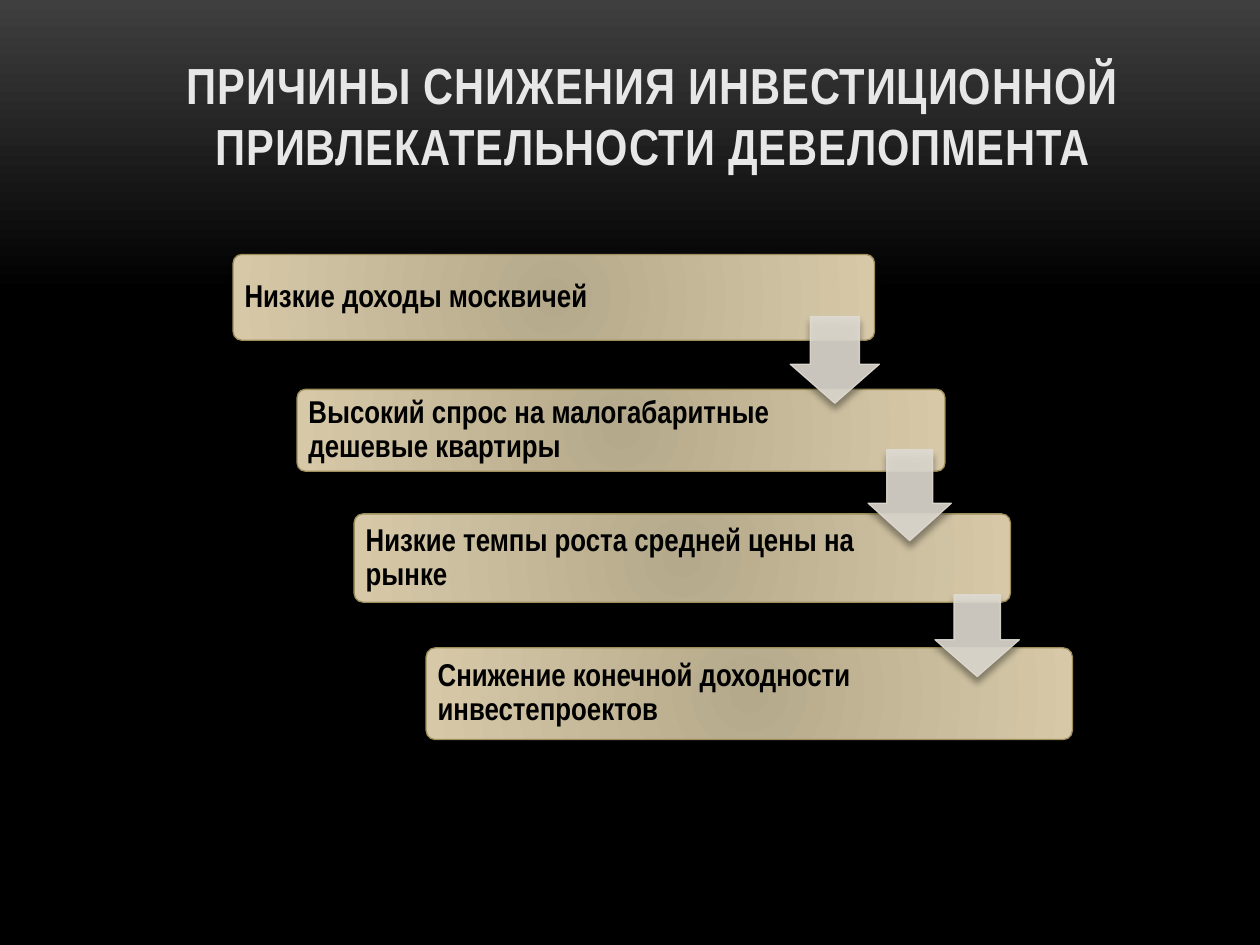
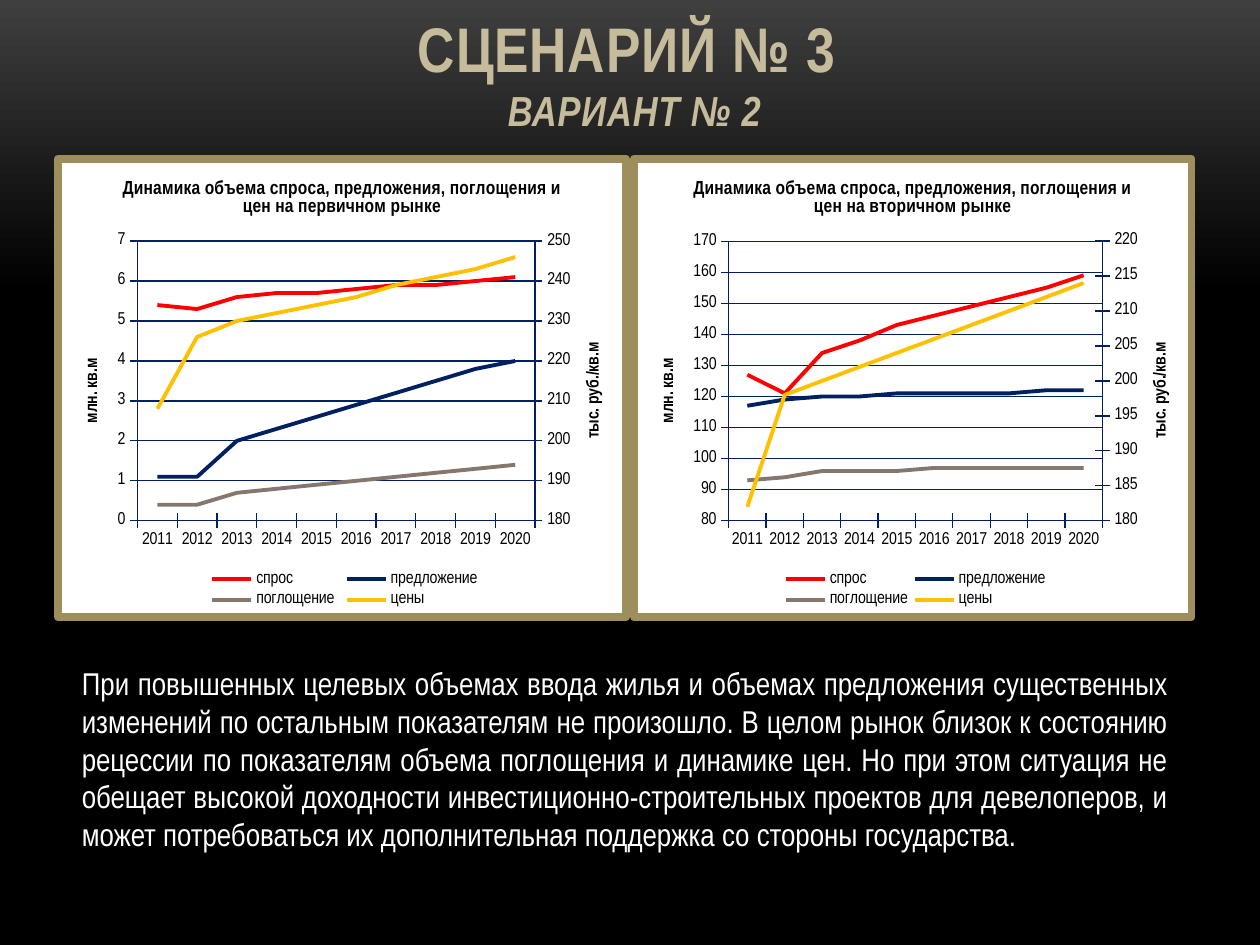
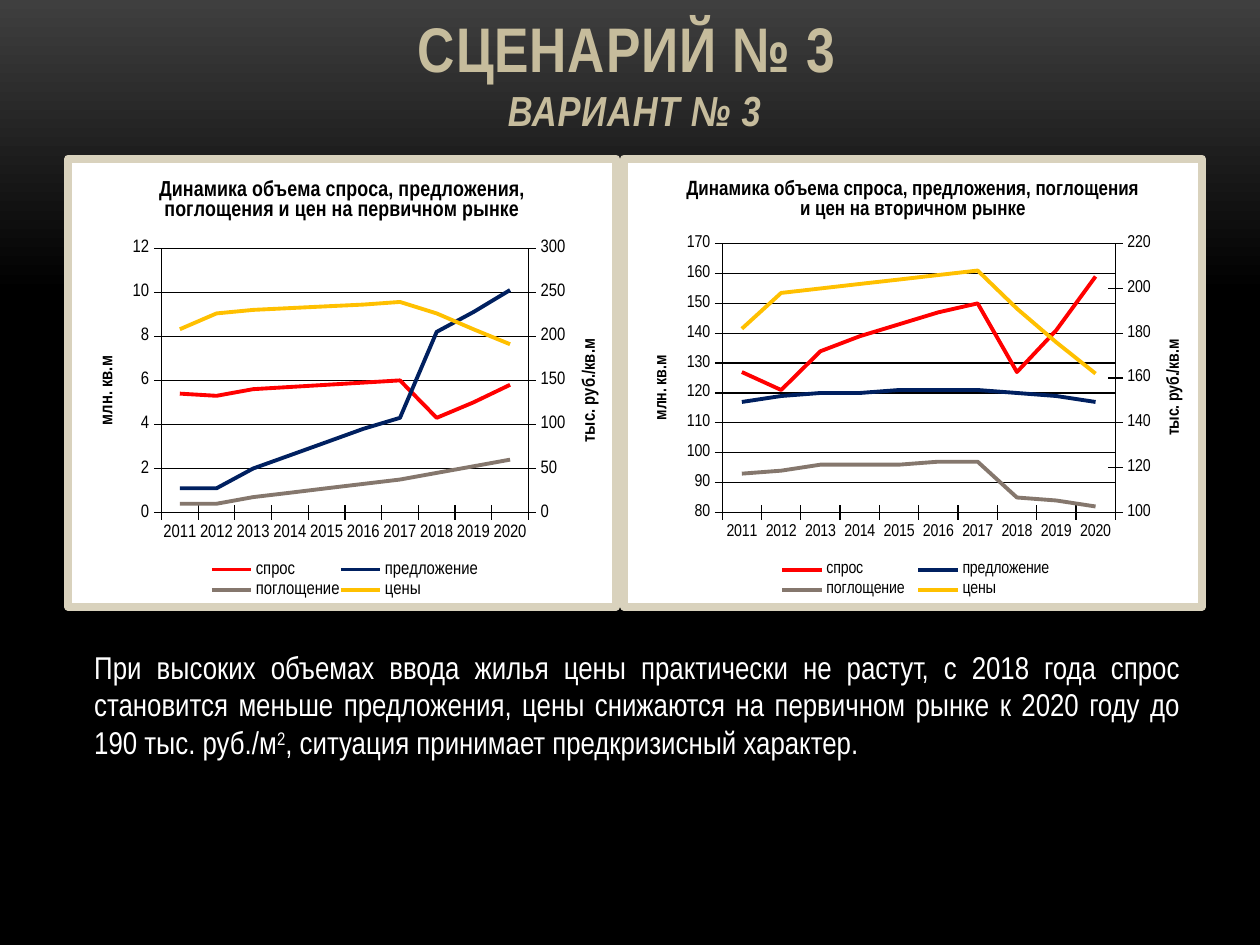
from copy import deepcopy
from dataclasses import dataclass

from pptx import Presentation
from pptx.chart.axis import ValueAxis
from pptx.chart.data import CategoryChartData
from pptx.dml.color import RGBColor
from pptx.enum.chart import XL_CHART_TYPE, XL_LEGEND_POSITION, XL_TICK_MARK
from pptx.enum.shapes import MSO_SHAPE
from pptx.enum.text import MSO_ANCHOR, PP_ALIGN
from pptx.oxml import parse_xml
from pptx.oxml.ns import nsdecls, qn
from pptx.util import Cm, Pt


@dataclass(frozen=True)
class Theme:
    font: str = "Arial Narrow"
    background_top: str = "3F3F3F"
    black: str = "000000"
    white: str = "FFFFFF"
    title: str = "E8E7E8"
    scenario: str = "C6BC9C"
    step_centre: str = "B4A98B"
    step_edge: str = "D7C9A8"
    gold: str = "9E8E5C"
    pale_gold: str = "D9D2BD"
    arrow: str = "DFDBD2"
    navy: str = "002060"
    series: tuple = ("FF0000", "002060", "85776D", "FFC000")
    title_size: float = 29
    scenario_size: float = 36
    variant_size: float = 24
    body_size: float = 18
    label_size: float = 10
    thin: float = 0.75
    curve: float = 2.25
    frame: float = 4.5


@dataclass(frozen=True)
class Scale:
    minimum: float
    maximum: float
    step: float


@dataclass(frozen=True)
class MarketChart:
    market: str
    box: tuple
    plot: tuple
    volume_scale: Scale
    price_scale: Scale
    values: tuple
    frame: str
    lines: str
    title_size: float
    label_size: float = Theme.label_size


YEARS = [str(year) for year in range(2011, 2021)]
SERIES_NAMES = ("спрос", "предложение", "поглощение", "цены")
LEGEND_BOX = (0.26, 0.89, 0.49, 0.1)
PRIMARY = "первичном"
SECONDARY = "вторичном"


def colour(value):
    return RGBColor.from_string(value)


def box_lengths(box):
    return [Cm(length) for length in box]


def set_line(line, value, width):
    line.color.rgb = colour(value)
    line.width = Pt(width)


def set_layout(parent, position, box, inner=False):
    """Place a chart part by fractions of the chart's size."""
    old_layout = parent.find(qn("c:layout"))
    if old_layout is not None:
        parent.remove(old_layout)
    target = '<c:layoutTarget val="inner"/>' if inner else ""
    modes = '<c:xMode val="edge"/><c:yMode val="edge"/>'
    sizes = "".join(f'<c:{key} val="{value}"/>' for key, value in zip("xywh", box))
    parent.insert(position, parse_xml(
        f'<c:layout {nsdecls("c")}><c:manualLayout>{target}{modes}{sizes}'
        '</c:manualLayout></c:layout>'))


def add_shadow(shape, blur, distance):
    shape.shadow.inherit = False
    effects = shape.element.spPr.find(qn("a:effectLst"))
    effects.append(parse_xml(
        f'<a:outerShdw {nsdecls("a")} blurRad="{Pt(blur)}" dist="{Pt(distance)}" '
        'dir="5400000" rotWithShape="0"><a:srgbClr val="000000">'
        '<a:alpha val="40000"/></a:srgbClr></a:outerShdw>'))


class Deck:
    def __init__(self, theme):
        self.theme = theme
        self.presentation = Presentation()
        self.presentation.slide_width = Cm(25.4)
        self.presentation.slide_height = Cm(19.05)
        self.slide = None

    def add_slide(self):
        self.slide = self.presentation.slides.add_slide(
            self.presentation.slide_layouts[6])
        fill = self.slide.background.fill
        self.set_gradient(fill, self.theme.background_top, self.theme.black, 0.31)
        fill.gradient_angle = 270

    def set_gradient(self, fill, first, last, end=1.0):
        fill.gradient()
        for stop, value, position in zip(fill.gradient_stops, (first, last), (0, end)):
            stop.color.rgb = colour(value)
            stop.position = position

    def format_run(self, run, size, value, bold=False, italic=False):
        run.font.name = self.theme.font
        run.font.size = Pt(size)
        run.font.color.rgb = colour(value)
        run.font.bold = bold
        run.font.italic = italic

    def text_box(self, box, anchor=MSO_ANCHOR.TOP):
        text_frame = self.slide.shapes.add_textbox(*box_lengths(box)).text_frame
        text_frame.word_wrap = True
        text_frame.vertical_anchor = anchor
        return text_frame

    def title(self, box, lines):
        """Add a centred title; each line is (text, size, colour, italic)."""
        text_frame = self.text_box(box, MSO_ANCHOR.BOTTOM)
        text_frame.text = "\n".join(line[0] for line in lines)
        for paragraph, (_, size, value, italic) in zip(text_frame.paragraphs, lines):
            paragraph.alignment = PP_ALIGN.CENTER
            run = paragraph.runs[0]
            self.format_run(run, size, value, bold=True, italic=italic)
            run.font._element.set("spc", "50")

    def scenario_title(self, variant):
        theme = self.theme
        self.title((2.31, 0.05, 20.96, 2.8), [
            ("СЦЕНАРИЙ № 3 ", theme.scenario_size, theme.scenario, False),
            (f"ВАРИАНТ № {variant}", theme.variant_size, theme.scenario, True)])

    def body(self, box, text, superscript="", ending=""):
        paragraph = self.text_box(box).paragraphs[0]
        paragraph.alignment = PP_ALIGN.JUSTIFY
        for part in filter(None, (text, superscript, ending)):
            run = paragraph.add_run()
            run.text = part
            self.format_run(run, self.theme.body_size, self.theme.white)
            if part == superscript:
                run.font._element.set("baseline", "30000")

    def step(self, box, text):
        shape = self.slide.shapes.add_shape(
            MSO_SHAPE.ROUNDED_RECTANGLE, *box_lengths(box))
        shape.adjustments[0] = 0.1
        self.set_gradient(shape.fill, self.theme.step_centre, self.theme.step_edge)
        gradient = shape.element.spPr.find(qn("a:gradFill"))
        gradient.replace(gradient.find(qn("a:lin")), parse_xml(
            f'<a:path {nsdecls("a")} path="circle"><a:fillToRect '
            'l="50000" t="50000" r="50000" b="50000"/></a:path>'))
        set_line(shape.line, self.theme.gold, self.theme.thin)
        add_shadow(shape, 3, 2)
        text_frame = shape.text_frame
        text_frame.word_wrap = True
        text_frame.vertical_anchor = MSO_ANCHOR.MIDDLE
        text_frame.margin_left = text_frame.margin_top = Cm(0.18)
        text_frame.margin_bottom = Cm(0.18)
        text_frame.margin_right = Cm(0.18 + 0.2 * box[2])
        text_frame.text = text
        paragraph = text_frame.paragraphs[0]
        paragraph.alignment = PP_ALIGN.LEFT
        paragraph.line_spacing = 0.9
        self.format_run(paragraph.runs[0], self.theme.body_size, self.theme.black, True)

    def down_arrow(self, box):
        shape = self.slide.shapes.add_shape(MSO_SHAPE.DOWN_ARROW, *box_lengths(box))
        shape.adjustments[0] = 0.55
        shape.adjustments[1] = 0.45
        shape.fill.solid()
        shape.fill.fore_color.rgb = colour(self.theme.arrow)
        set_line(shape.line, self.theme.arrow, self.theme.thin)
        for solid_colour in shape.element.spPr.iter(qn("a:srgbClr")):
            solid_colour.append(parse_xml(f'<a:alpha {nsdecls("a")} val="90000"/>'))
        add_shadow(shape, 4, 3.4)

    def chart_text(self, text_frame, text, size):
        text_frame.text = text
        self.format_run(text_frame.paragraphs[0].runs[0], size, self.theme.black, True)

    def format_axis(self, axis, line_colour):
        axis.major_tick_mark = XL_TICK_MARK.CROSS
        axis.minor_tick_mark = XL_TICK_MARK.NONE
        set_line(axis.format.line, line_colour, self.theme.thin)

    def format_value_axis(self, axis, scale, title, market_chart):
        self.format_axis(axis, market_chart.lines)
        axis.minimum_scale = scale.minimum
        axis.maximum_scale = scale.maximum
        axis.major_unit = scale.step
        text_frame = axis.axis_title.text_frame
        self.chart_text(text_frame, title, market_chart.label_size)
        body_properties = text_frame._txBody.find(qn("a:bodyPr"))
        body_properties.set("rot", "-5400000")
        body_properties.set("vert", "horz")

    def add_price_axis(self, chart, market_chart):
        """Move the last series to a second line plot with its own right axis."""
        plot_area = chart.element.chart.plotArea
        volume_plot, category_axis, value_axis = (
            plot_area.find(qn(f"c:{tag}")) for tag in ("lineChart", "catAx", "valAx"))
        crosses = value_axis.find(qn("c:crosses"))
        if value_axis.find(qn("c:crossBetween")) is None:
            crosses.addnext(parse_xml(
                f'<c:crossBetween {nsdecls("c")} val="between"/>'))
        price_plot, price_categories, price_axis = (
            deepcopy(element) for element in (volume_plot, category_axis, value_axis))
        for series in price_plot.findall(qn("c:ser"))[:-1]:
            price_plot.remove(series)
        volume_plot.remove(volume_plot.findall(qn("c:ser"))[-1])
        category_id, value_id = "50010", "50020"
        for axis_id, value in zip(price_plot.findall(qn("c:axId")),
                                  (category_id, value_id)):
            axis_id.set("val", value)
        for axis, own_id, crossing_id in ((price_categories, category_id, value_id),
                                          (price_axis, value_id, category_id)):
            axis.find(qn("c:axId")).set("val", own_id)
            axis.find(qn("c:crossAx")).set("val", crossing_id)
        price_categories.find(qn("c:delete")).set("val", "1")
        price_axis.find(qn("c:axPos")).set("val", "r")
        price_axis.find(qn("c:crosses")).set("val", "max")
        volume_plot.addnext(price_plot)
        value_axis.addnext(price_axis)
        price_axis.addnext(price_categories)
        right_axis = ValueAxis(price_axis)
        right_axis.has_major_gridlines = False
        self.format_value_axis(
            right_axis, market_chart.price_scale, "тыс. руб./кв.м", market_chart)

    def chart(self, market_chart):
        theme = self.theme
        data = CategoryChartData()
        data.categories = YEARS
        for name, values in zip(SERIES_NAMES, market_chart.values):
            data.add_series(name, values)
        chart = self.slide.shapes.add_chart(
            XL_CHART_TYPE.LINE, *box_lengths(market_chart.box), data).chart
        chart.font.name = theme.font
        chart.font.size = Pt(market_chart.label_size)
        chart.font.color.rgb = colour(theme.black)
        chart.has_title = True
        self.chart_text(
            chart.chart_title.text_frame,
            "Динамика объема спроса, предложения, поглощения и цен на "
            f"{market_chart.market} рынке", market_chart.title_size)

        plot = chart.plots[0]
        plot.vary_by_categories = False
        for series, value in zip(plot.series, theme.series):
            series.smooth = False
            set_line(series.format.line, value, theme.curve)
        self.format_axis(chart.category_axis, market_chart.lines)
        value_axis = chart.value_axis
        self.format_value_axis(
            value_axis, market_chart.volume_scale, "млн. кв.м", market_chart)
        set_line(value_axis.major_gridlines.format.line, market_chart.lines, theme.thin)
        self.add_price_axis(chart, market_chart)

        chart.has_legend = True
        chart.legend.position = XL_LEGEND_POSITION.BOTTOM
        chart.legend.include_in_layout = False
        set_layout(chart.legend._element, 1, LEGEND_BOX)
        chart_element = chart.element.chart
        set_layout(chart_element.plotArea, 0, market_chart.plot, inner=True)
        chart_element.addnext(parse_xml(
            f'<c:spPr {nsdecls("c", "a")}><a:solidFill><a:srgbClr val="{theme.white}"/>'
            f'</a:solidFill><a:ln w="{Pt(theme.frame)}"><a:solidFill>'
            f'<a:srgbClr val="{market_chart.frame}"/></a:solidFill><a:round/></a:ln>'
            '</c:spPr>'))


def add_reasons(deck):
    deck.add_slide()
    deck.title((2.69, 1.12, 20.96, 2.54), [
        ("ПРИЧИНЫ СНИЖЕНИЯ ИНВЕСТИЦИОННОЙ ПРИВЛЕКАТЕЛЬНОСТИ ДЕВЕЛОПМЕНТА",
         deck.theme.title_size, deck.theme.title, False)])
    for box, reason in (
            ((4.7, 5.13, 12.93, 1.73), "Низкие доходы москвичей"),
            ((5.99, 7.85, 13.06, 1.65),
             "Высокий спрос на малогабаритные дешевые квартиры"),
            ((7.14, 10.36, 13.23, 1.78), "Низкие темпы роста средней цены на рынке"),
            ((8.59, 13.06, 13.03, 1.85),
             "Снижение конечной доходности инвестепроектов")):
        deck.step(box, reason)
    for box in ((15.93, 6.38, 1.8, 1.75), (17.5, 9.07, 1.68, 1.83),
                (18.85, 11.99, 1.7, 1.65)):
        deck.down_arrow(box)


def add_variant_two(deck):
    theme = deck.theme
    deck.add_slide()
    deck.scenario_title(2)
    deck.chart(MarketChart(
        PRIMARY, (1.09, 3.12, 11.61, 9.4), (0.14, 0.18, 0.7, 0.61),
        Scale(0, 7, 1), Scale(180, 250, 10),
        ((5.4, 5.3, 5.6, 5.7, 5.7, 5.8, 5.9, 5.9, 6, 6.1),
         (1.1, 1.1, 2, 2.3, 2.6, 2.9, 3.2, 3.5, 3.8, 4),
         (0.4, 0.4, 0.7, 0.8, 0.9, 1, 1.1, 1.2, 1.3, 1.4),
         (208, 226, 230, 232, 234, 236, 239, 241, 243, 246)),
        theme.gold, theme.navy, 11))
    deck.chart(MarketChart(
        SECONDARY, (12.7, 3.12, 11.4, 9.4), (0.17, 0.18, 0.67, 0.61),
        Scale(80, 170, 10), Scale(180, 220, 5),
        ((127, 121, 134, 138, 143, 146, 149, 152, 155, 159),
         (117, 119, 120, 120, 121, 121, 121, 121, 122, 122),
         (93, 94, 96, 96, 96, 97, 97, 97, 97, 97),
         (182, 198, 200, 202, 204, 206, 208, 210, 212, 214)),
        theme.gold, theme.navy, 11))
    deck.body(
        (1.4, 13.26, 22.4, 4.88),
        "При повышенных целевых объемах ввода жилья и объемах предложения "
        "существенных изменений по остальным показателям не произошло. В целом "
        "рынок близок к состоянию рецессии по показателям объема поглощения и "
        "динамике цен. Но при этом ситуация не обещает высокой доходности "
        "инвестиционно-строительных проектов для девелоперов, и может "
        "потребоваться их дополнительная поддержка со стороны государства.")


def add_variant_three(deck):
    theme = deck.theme
    deck.add_slide()
    deck.scenario_title(3)
    deck.chart(MarketChart(
        PRIMARY, (1.3, 3.12, 11.2, 9.19), (0.17, 0.2, 0.67, 0.59),
        Scale(0, 12, 2), Scale(0, 300, 50),
        ((5.4, 5.3, 5.6, 5.7, 5.8, 5.9, 6, 4.3, 5, 5.8),
         (1.1, 1.1, 2, 2.6, 3.2, 3.8, 4.3, 8.2, 9.1, 10.1),
         (0.4, 0.4, 0.7, 0.9, 1.1, 1.3, 1.5, 1.8, 2.1, 2.4),
         (208, 226, 230, 232, 234, 236, 239, 226, 208, 191)),
        theme.pale_gold, theme.black, 12.6, 10.5))
    deck.chart(MarketChart(
        SECONDARY, (12.5, 3.12, 11.81, 9.19), (0.17, 0.19, 0.68, 0.6),
        Scale(80, 170, 10), Scale(100, 220, 20),
        ((127, 121, 134, 139, 143, 147, 150, 127, 141, 159),
         (117, 119, 120, 120, 121, 121, 121, 120, 119, 117),
         (93, 94, 96, 96, 96, 97, 97, 85, 84, 82),
         (182, 198, 200, 202, 204, 206, 208, 191, 176, 162)),
        theme.pale_gold, theme.black, 12))
    deck.body(
        (1.65, 12.93, 22.4, 2.57),
        "При высоких объемах ввода жилья цены практически не растут, с 2018 года "
        "спрос становится меньше предложения, цены снижаются на первичном рынке "
        "к 2020 году до 190 тыс. руб./м",
        "2", ", ситуация принимает предкризисный характер.")


def main():
    deck = Deck(Theme())
    add_reasons(deck)
    add_variant_two(deck)
    add_variant_three(deck)
    deck.presentation.save("out.pptx")


if __name__ == "__main__":
    main()
